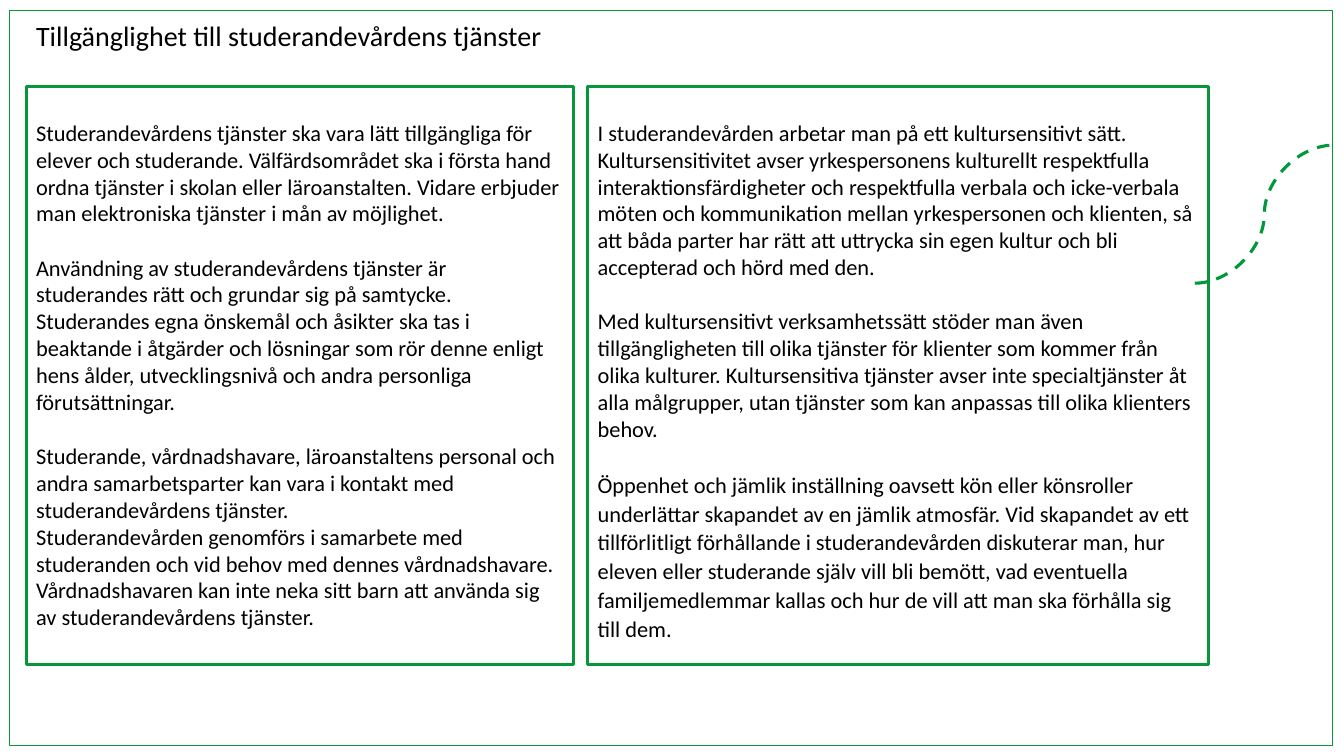
import pptx
import pptx.util
import pptx.dml.color
import pptx.enum.dml
import pptx.enum.shapes
import pptx.enum.text
import pptx.oxml.ns
import lxml.etree

Inches, Pt = pptx.util.Inches, pptx.util.Pt
COLORS = {"text": "000000", "border": "09963B", "curve": "00983A"}
FONT = "Calibri"
BODY_SIZE = 16
LINE_HEIGHT = 19.5  # points, one line of body text

TITLE = "Tillgänglighet till studerandevårdens tjänster"

# Each panel is a list of groups; a group is a list of paragraphs set without a gap.
ACCESS = [
    ["Studerandevårdens tjänster ska vara lätt tillgängliga för elever och studerande. "
     "Välfärdsområdet ska i första hand ordna tjänster i skolan eller läroanstalten. "
     "Vidare erbjuder man elektroniska tjänster i mån av möjlighet."],
    ["Användning av studerandevårdens tjänster är studerandes rätt och grundar sig på samtycke.",
     "Studerandes egna önskemål och åsikter ska tas i beaktande i åtgärder och lösningar "
     "som rör denne enligt hens ålder, utvecklingsnivå och andra personliga förutsättningar."],
    ["Studerande, vårdnadshavare, läroanstaltens personal och andra samarbetsparter "
     "kan vara i kontakt med studerandevårdens tjänster.",
     "Studerandevården genomförs i samarbete med studeranden och vid behov med dennes "
     "vårdnadshavare. Vårdnadshavaren kan inte neka sitt barn att använda sig av "
     "studerandevårdens tjänster."],
]
CULTURE = [
    ["I studerandevården arbetar man på ett kultursensitivt sätt. Kultursensitivitet avser "
     "yrkespersonens kulturellt respektfulla interaktionsfärdigheter och respektfulla verbala "
     "och icke-verbala möten och kommunikation mellan yrkespersonen och klienten, så att båda "
     "parter har rätt att uttrycka sin egen kultur och bli accepterad och hörd med den."],
    ["Med kultursensitivt verksamhetssätt stöder man även tillgängligheten till olika tjänster "
     "för klienter som kommer från olika kulturer. Kultursensitiva tjänster avser inte "
     "specialtjänster åt alla målgrupper, utan tjänster som kan anpassas till olika klienters "
     "behov."],
    ["Öppenhet och jämlik inställning oavsett kön eller könsroller underlättar skapandet av en "
     "jämlik atmosfär. Vid skapandet av ett tillförlitligt förhållande i studerandevården "
     "diskuterar man, hur eleven eller studerande själv vill bli bemött, vad eventuella "
     "familjemedlemmar kallas och hur de vill att man ska förhålla sig till dem."],
]


def rgb(name):
    return pptx.dml.color.RGBColor.from_string(COLORS[name])


def style_paragraph(paragraph, size):
    paragraph.alignment = pptx.enum.text.PP_ALIGN.LEFT
    paragraph.font.name = FONT
    paragraph.font.size = Pt(size)
    paragraph.font.color.rgb = rgb("text")


def add_title(slide, left, top, width, height):
    title = slide.shapes.add_textbox(*map(Inches, (left, top, width, height)))
    title.text_frame.word_wrap = True
    heading = title.text_frame.paragraphs[0]
    heading.text = TITLE
    style_paragraph(heading, 20)


def add_outline(slide, box, weight):
    outline = slide.shapes.add_shape(
        pptx.enum.shapes.MSO_SHAPE.RECTANGLE, *map(Inches, box))
    outline.shadow.inherit = False
    outline.fill.background()
    outline.line.color.rgb = rgb("border")
    outline.line.width = Pt(weight)
    return outline


def add_panel(slide, box, groups, last_spacing=None):
    """Outlined text panel: one line of air above the text and between groups."""
    frame = add_outline(slide, box, 2.25).text_frame
    frame.word_wrap = True
    frame.vertical_anchor = pptx.enum.text.MSO_ANCHOR.TOP
    frame.margin_top = Inches(0.05) + Pt(LINE_HEIGHT)
    for group_index, group in enumerate(groups):
        for line_index, text in enumerate(group):
            first = group_index == line_index == 0
            paragraph = frame.paragraphs[0] if first else frame.add_paragraph()
            paragraph.text = text
            style_paragraph(paragraph, BODY_SIZE)
            if group_index and line_index == 0:
                paragraph.space_before = Pt(LINE_HEIGHT)
    if last_spacing:
        paragraph.line_spacing = last_spacing


def add_dashed_curve(slide, left, top, width, height):
    """Dashed S-curve rising from the lower left to the upper right of its box."""
    curve = slide.shapes.add_connector(
        pptx.enum.shapes.MSO_CONNECTOR.CURVE,
        *map(Inches, (left, top + height, left + width, top)))
    curve.line.color.rgb = rgb("curve")
    curve.line.width = Pt(2.25)
    curve.line.dash_style = pptx.enum.dml.MSO_LINE.DASH
    properties = curve.element.find(pptx.oxml.ns.qn("p:spPr"))
    lxml.etree.SubElement(properties, pptx.oxml.ns.qn("a:effectLst"))


def build_slide(deck):
    slide = deck.slides.add_slide(deck.slide_layouts[6])
    left, top, height = 0.26, 0.86, 5.73
    access_width, culture_width, gap = 5.43, 6.16, 0.14
    add_title(slide, left, 0.13, 10.23, 0.44)
    add_panel(slide, (left, top, access_width, height), ACCESS)
    add_panel(slide, (left + access_width + gap, top, culture_width, height),
              CULTURE, last_spacing=1.07)
    add_dashed_curve(slide, 11.85, 1.44, 1.38, 1.37)
    add_outline(slide, (0.09, 0.1, 13.13, 7.3), 0.75)


def main():
    deck = pptx.Presentation()
    deck.slide_width, deck.slide_height = Inches(13.33), Inches(7.5)
    build_slide(deck)
    deck.save("out.pptx")


if __name__ == "__main__":
    main()
